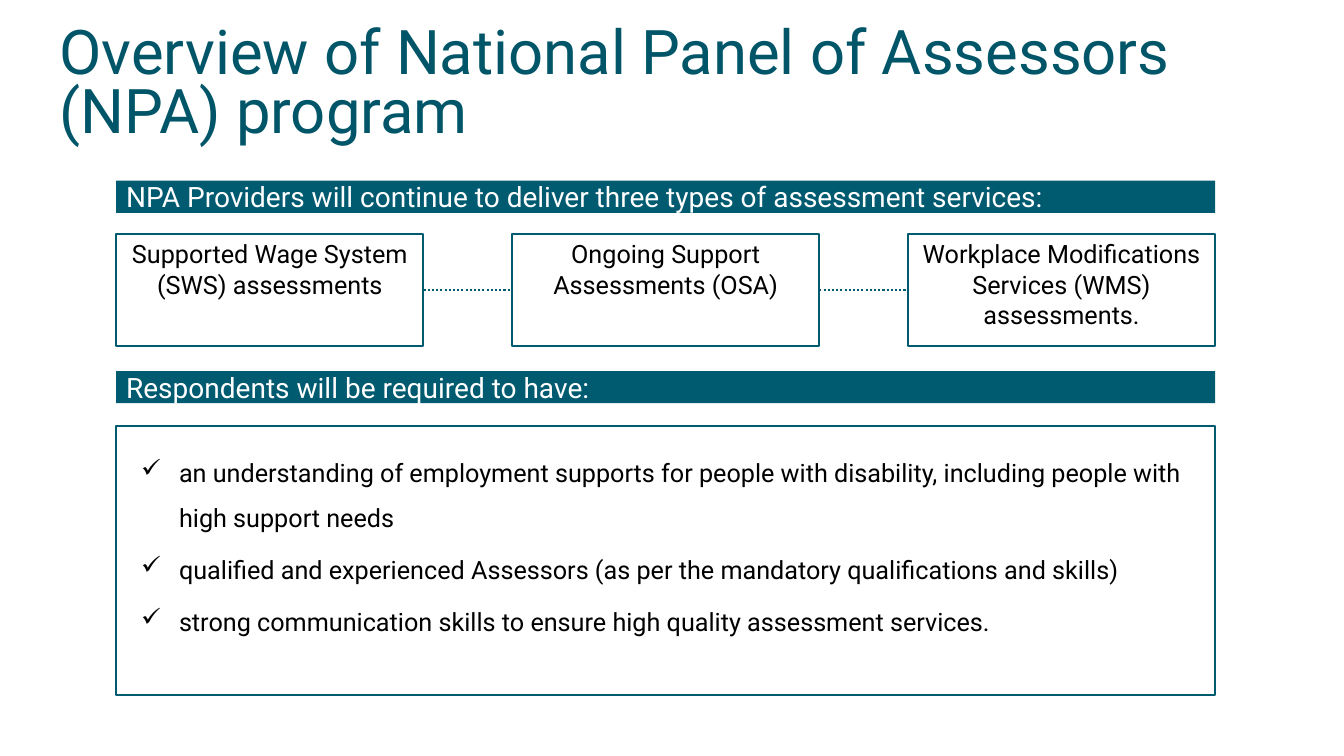
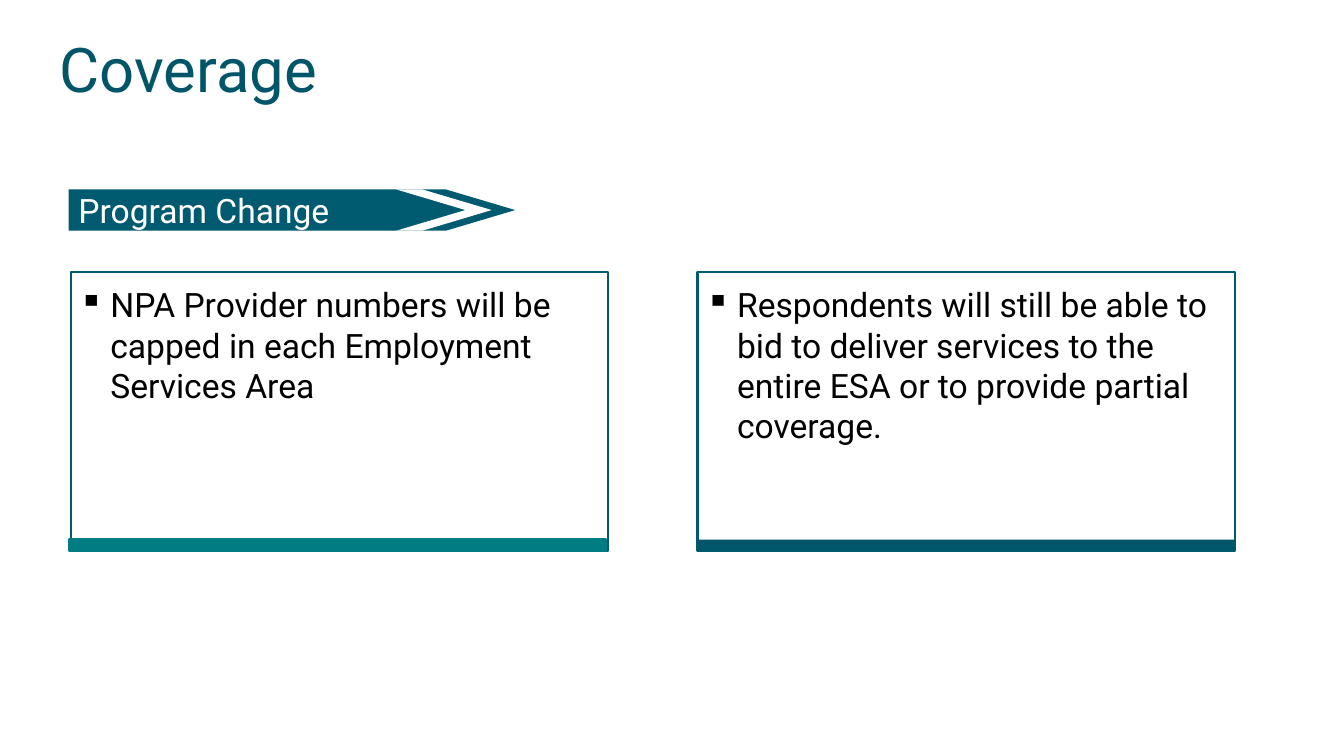
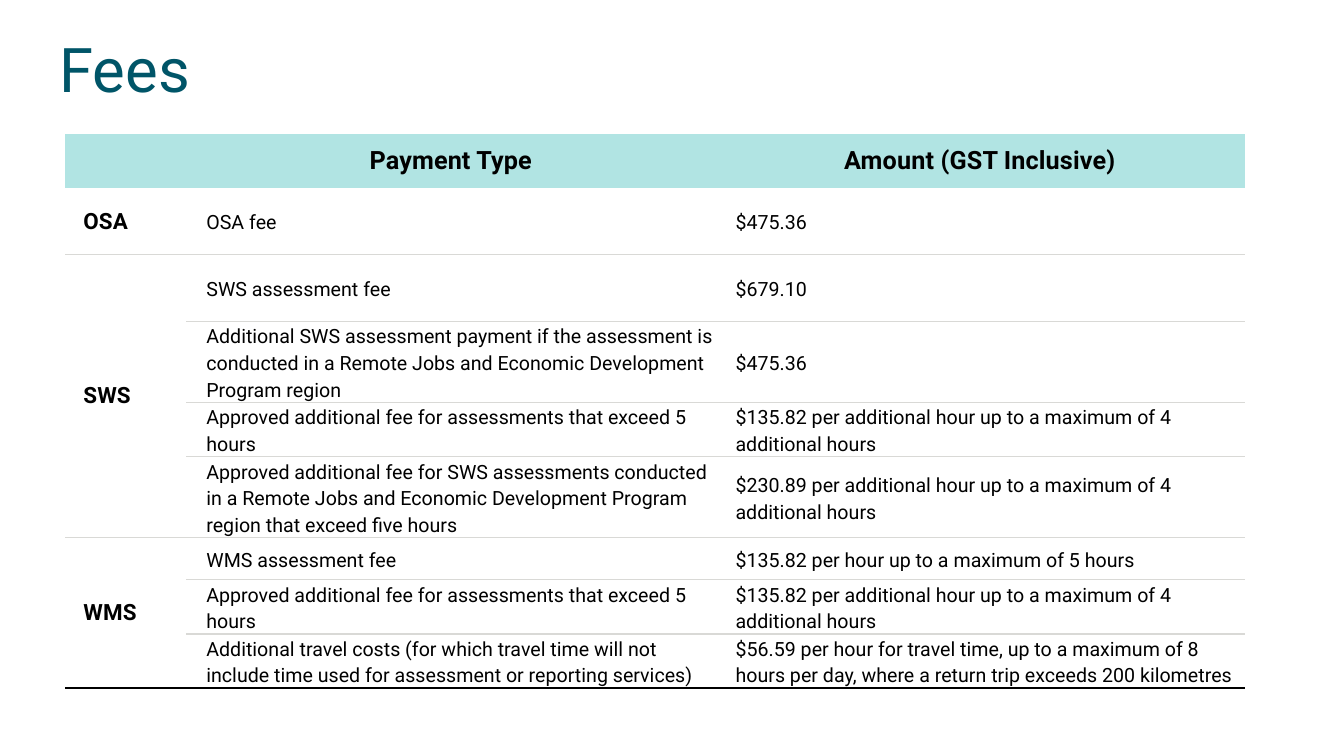
import dataclasses
import itertools

import pptx
import pptx.dml.color
import pptx.enum.dml
import pptx.enum.shapes
import pptx.enum.text
import pptx.oxml.ns
import pptx.oxml.xmlchemy
import pptx.util
import lxml.etree

Pt = pptx.util.Pt
RGB = pptx.dml.color.RGBColor.from_string
ALIGN = pptx.enum.text.PP_ALIGN
ANCHOR = pptx.enum.text.MSO_ANCHOR
RECTANGLE = pptx.enum.shapes.MSO_SHAPE.RECTANGLE
qn = pptx.oxml.ns.qn


@dataclasses.dataclass(frozen=True)
class Theme:
    font: str = "Roboto"
    title_color: str = "005568"
    primary: str = "005A70"
    accent: str = "007C82"
    header_fill: str = "B1E4E3"
    rule: str = "D9D9D6"
    text: str = "000000"
    white: str = "FFFFFF"
    title_size: float = 44
    large_size: float = 24
    band_size: float = 20
    body_size: float = 18
    category_size: float = 16
    table_size: float = 14
    outline: float = 1.5


THEME = Theme()
DEFAULT_INSETS = (7.2, 3.6, 7.2, 3.6)


@dataclasses.dataclass(frozen=True)
class Box:
    left: float
    top: float
    width: float
    height: float

    def lengths(self):
        return [Pt(value) for value in (self.left, self.top, self.width, self.height)]


def add_bullet(paragraph, character, indent, hanging):
    properties = paragraph._p.get_or_add_pPr()
    properties.set("marL", str(Pt(indent)))
    properties.set("indent", str(-Pt(hanging)))
    lxml.etree.SubElement(properties, qn("a:buChar")).set("char", character)


def format_paragraph(paragraph, size, color, align=ALIGN.LEFT, bold=False, tracking=None):
    paragraph.alignment = align
    for run in paragraph.runs:
        run.font.name = THEME.font
        run.font.size = Pt(size)
        run.font.bold = bold
        run.font.color.rgb = RGB(color)
        if tracking:
            run._r.get_or_add_rPr().set("spc", str(tracking))


def write_text(shape, text, size, color, align=ALIGN.LEFT, anchor=ANCHOR.TOP, insets=DEFAULT_INSETS):
    frame = shape.text_frame
    frame.word_wrap = True
    frame.vertical_anchor = anchor
    frame.margin_left, frame.margin_top, frame.margin_right, frame.margin_bottom = map(Pt, insets)
    frame.text = text
    for paragraph in frame.paragraphs:
        format_paragraph(paragraph, size, color, align)
    return frame.paragraphs


def style_shape(shape, fill=None, line=None, opacity=None):
    shape.shadow.inherit = False
    if fill:
        shape.fill.solid()
        shape.fill.fore_color.rgb = RGB(fill)
    else:
        shape.fill.background()
    if opacity:
        color = shape._element.spPr.find(qn("a:solidFill"))[0]
        lxml.etree.SubElement(color, qn("a:alpha")).set("val", str(opacity * 1000))
    if line:
        shape.line.color.rgb = RGB(line)
        shape.line.width = Pt(THEME.outline)
    else:
        shape.line.fill.background()
    return shape


def add_rectangle(slide, box, **style):
    return style_shape(slide.shapes.add_shape(RECTANGLE, *box.lengths()), **style)


def add_outline(slide, points, fill):
    corners = [(Pt(x), Pt(y)) for x, y in points]
    builder = slide.shapes.build_freeform(*corners[0])
    builder.add_line_segments(corners[1:], close=True)
    return style_shape(builder.convert_to_shape(), fill=fill)


def add_title(slide, text, height=53.3, line_spacing=None):
    title = slide.shapes.add_textbox(*Box(42.5, 21.6, 874, height).lengths())
    paragraphs = write_text(title, text, THEME.title_size, THEME.title_color,
                            anchor=ANCHOR.BOTTOM, insets=(0, 0, 0, 0))
    if line_spacing:
        paragraphs[0].line_spacing = line_spacing


def add_band(slide, box, text):
    band = add_rectangle(slide, box, fill=THEME.primary)
    write_text(band, text, THEME.band_size, THEME.white, anchor=ANCHOR.MIDDLE)


def add_service_row(slide, box, services, card_width):
    gap = (box.width - card_width * len(services)) / (len(services) - 1)
    cards = []
    for index, service in enumerate(services):
        card_box = Box(box.left + index * (card_width + gap), box.top, card_width, box.height)
        card = add_rectangle(slide, card_box, fill=THEME.white, line=THEME.primary, opacity=7)
        write_text(card, service, THEME.body_size, THEME.text, ALIGN.CENTER, insets=(3.6,) * 4)
        cards.append(card)
    for card, following in itertools.pairwise(cards):
        link = slide.shapes.add_connector(pptx.enum.shapes.MSO_CONNECTOR.STRAIGHT, 0, 0, 0, 0)
        link.begin_connect(card, 3)
        link.end_connect(following, 1)
        link.line.color.rgb = RGB(THEME.primary)
        link.line.width = Pt(THEME.outline)
        link.line.dash_style = pptx.enum.dml.MSO_LINE.ROUND_DOT
        lxml.etree.SubElement(link._element.spPr, qn("a:effectLst"))


def add_checklist(slide, box, items):
    add_rectangle(slide, box, line=THEME.primary)
    inner = Box(box.left - 25.2, box.top + 7.9, box.width + 12.6, 144)
    checklist = slide.shapes.add_textbox(*inner.lengths())
    paragraphs = write_text(checklist, "\n".join(items), THEME.body_size, THEME.text)
    for index, paragraph in enumerate(paragraphs):
        add_bullet(paragraph, "✓", 63, 27)
        paragraph.line_spacing = 1.5
        if index:
            paragraph.space_before = Pt(4.5)


def add_arrow_banner(slide, box, text, point=49.5, stripe=18.7, stripe_start=234):
    right = box.left + box.width
    middle, bottom = box.top + box.height / 2, box.top + box.height
    banner = add_outline(slide, [
        (box.left, box.top), (right - point, box.top), (right, middle),
        (right - point, bottom), (box.left, bottom)], THEME.primary)
    write_text(banner, text, THEME.large_size, THEME.white, anchor=ANCHOR.MIDDLE)
    start = box.left + stripe_start
    add_outline(slide, [
        (start, box.top), (start + stripe, box.top), (start + stripe + point, middle),
        (start + stripe, bottom), (start, bottom), (start + point, middle)], THEME.white)


def add_panel(slide, box, text, bar_fill, bar_line=None, bar_shift=0):
    panel = add_rectangle(slide, box, fill=THEME.white, line=THEME.primary)
    paragraphs = write_text(panel, text, THEME.large_size, THEME.text, insets=(5.8, 8.6, 5.8, 11.5))
    add_bullet(paragraphs[0], "▪", 22.5, 22.5)
    bar_height = 8
    bar = Box(box.left + bar_shift, box.top + box.height - bar_height, box.width, bar_height)
    add_rectangle(slide, bar, fill=bar_fill, line=bar_line)


def set_borders(cell, top=None, bottom=None):
    properties = cell._tc.get_or_add_tcPr()
    position = 0
    for tag, color in (("a:lnT", top), ("a:lnB", bottom)):
        if color:
            line = lxml.etree.Element(qn(tag), w=str(Pt(1)))
            fill = lxml.etree.SubElement(line, qn("a:solidFill"))
            lxml.etree.SubElement(fill, qn("a:srgbClr")).set("val", color)
            properties.insert(position, line)
            position += 1


def write_cell(cell, text, size, fill, insets, align=ALIGN.LEFT, bold=False, tracking=None,
               line_spacing=None):
    cell.fill.solid()
    cell.fill.fore_color.rgb = RGB(fill)
    cell.vertical_anchor = ANCHOR.MIDDLE
    cell.margin_left, cell.margin_top, cell.margin_right, cell.margin_bottom = map(Pt, insets)
    cell.text = text
    paragraph = cell.text_frame.paragraphs[0]
    format_paragraph(paragraph, size, THEME.text, align, bold, tracking)
    if not text:
        paragraph.font.size = Pt(size)
    if line_spacing:
        paragraph.line_spacing = line_spacing


def add_fee_table(slide, box, headings, groups, column_widths, row_heights):
    frame = slide.shapes.add_table(len(row_heights), len(column_widths), *box.lengths())
    table = frame.table
    table.first_row = table.horz_banding = False
    style = table._tbl.tblPr.find(qn("a:tableStyleId"))
    style.text = "{2D5ABB26-0587-4C30-8999-92F81FD0307C}"
    for column, width in zip(table.columns, column_widths):
        column.width = Pt(width)
    for row, height in zip(table.rows, row_heights):
        row.height = Pt(height)
    for index, heading in enumerate(headings):
        write_cell(table.cell(0, index), heading, THEME.body_size, THEME.header_fill, (4.3,) * 4,
                   ALIGN.CENTER, bold=True, tracking=10)

    last_row = len(row_heights) - 1
    row_index = 1
    for category, fees in groups:
        group_end = row_index + len(fees) - 1
        category_cell = table.cell(row_index, 0)
        if group_end > row_index:
            category_cell.merge(table.cell(group_end, 0))
        write_cell(category_cell, category, THEME.category_size, THEME.white,
                   (13, 4.3, 4.3, 4.3), bold=True, tracking=10)
        set_borders(category_cell, top=THEME.rule if row_index > 1 else None,
                    bottom=THEME.text if group_end == last_row else THEME.rule)
        for fee in fees:
            for column_index, (text, right_inset) in enumerate(zip(fee, (0, 4.3)), 1):
                cell = table.cell(row_index, column_index)
                write_cell(cell, text, THEME.table_size, THEME.white,
                           (14.4, 0, right_inset, 0), line_spacing=1.15)
                set_borders(cell, top=THEME.rule if row_index > 1 else None,
                            bottom=THEME.text if row_index == last_row else THEME.rule)
            row_index += 1


def build_overview(slide):
    add_title(slide, "Overview of National Panel of Assessors (NPA) program", 82, 0.8)
    left, width = 83, 785
    add_band(slide, Box(left, 129, width, 23),
             "NPA Providers will continue to deliver three types of assessment services:")
    add_service_row(slide, Box(left, 167, width, 80), [
        "Supported Wage System (SWS) assessments",
        "Ongoing Support Assessments (OSA)",
        "Workplace Modifications Services (WMS) assessments."], 219.5)
    add_band(slide, Box(left, 265, width, 23), "Respondents will be required to have:")
    add_checklist(slide, Box(left, 304.5, width, 192), [
        "an understanding of employment supports for people with disability, "
        "including people with high support needs",
        "qualified and experienced Assessors (as per the mandatory qualifications and skills)",
        "strong communication skills to ensure high quality assessment services."])


def build_coverage(slide):
    add_title(slide, "Coverage")
    add_arrow_banner(slide, Box(49, 135.3, 319, 29.5), "Program Change")
    add_panel(slide, Box(50.5, 194.4, 384, 199),
              "NPA Provider numbers will be capped in each Employment Services Area",
              THEME.accent, bar_line=THEME.accent, bar_shift=-1.5)
    add_panel(slide, Box(498.2, 194.4, 384, 199),
              "Respondents will still be able to bid to deliver services to the entire ESA "
              "or to provide partial coverage.", THEME.title_color)


def build_fees(slide):
    add_title(slide, "Fees")
    extra_hours = "Approved additional fee for assessments that exceed 5 hours"
    extra_rate = "$135.82 per additional hour up to a maximum of 4 additional hours"
    groups = [
        ("OSA", [("OSA fee", "$475.36")]),
        ("SWS", [
            ("SWS assessment fee", "$679.10"),
            ("Additional SWS assessment payment if the assessment is conducted in a "
             "Remote Jobs and Economic Development Program region", "$475.36"),
            (extra_hours, extra_rate),
            ("Approved additional fee for SWS assessments conducted in a Remote Jobs and "
             "Economic Development Program region that exceed five hours",
             "$230.89 per additional hour up to a maximum of 4 additional hours")]),
        ("WMS", [
            ("WMS assessment fee", "$135.82 per hour up to a maximum of 5 hours"),
            (extra_hours, extra_rate),
            ("Additional travel costs (for which travel time will not include time used for "
             "assessment or reporting services)",
             "$56.59 per hour for travel time, up to a maximum of 8 hours per day, "
             "where a return trip exceeds 200 kilometres")])]
    row_heights = [38.5, 47.7, 47.7] + [30] * 6
    add_fee_table(slide, Box(46.6, 95.8, 842.4, sum(row_heights)),
                  ["", "Payment Type", "Amount (GST Inclusive)"], groups,
                  [86.4, 378, 378], row_heights)


def main():
    presentation = pptx.Presentation()
    presentation.slide_width, presentation.slide_height = Pt(960), Pt(540)
    blank = presentation.slide_layouts[6]
    for build in (build_overview, build_coverage, build_fees):
        build(presentation.slides.add_slide(blank))
    presentation.save("out.pptx")


if __name__ == "__main__":
    main()
